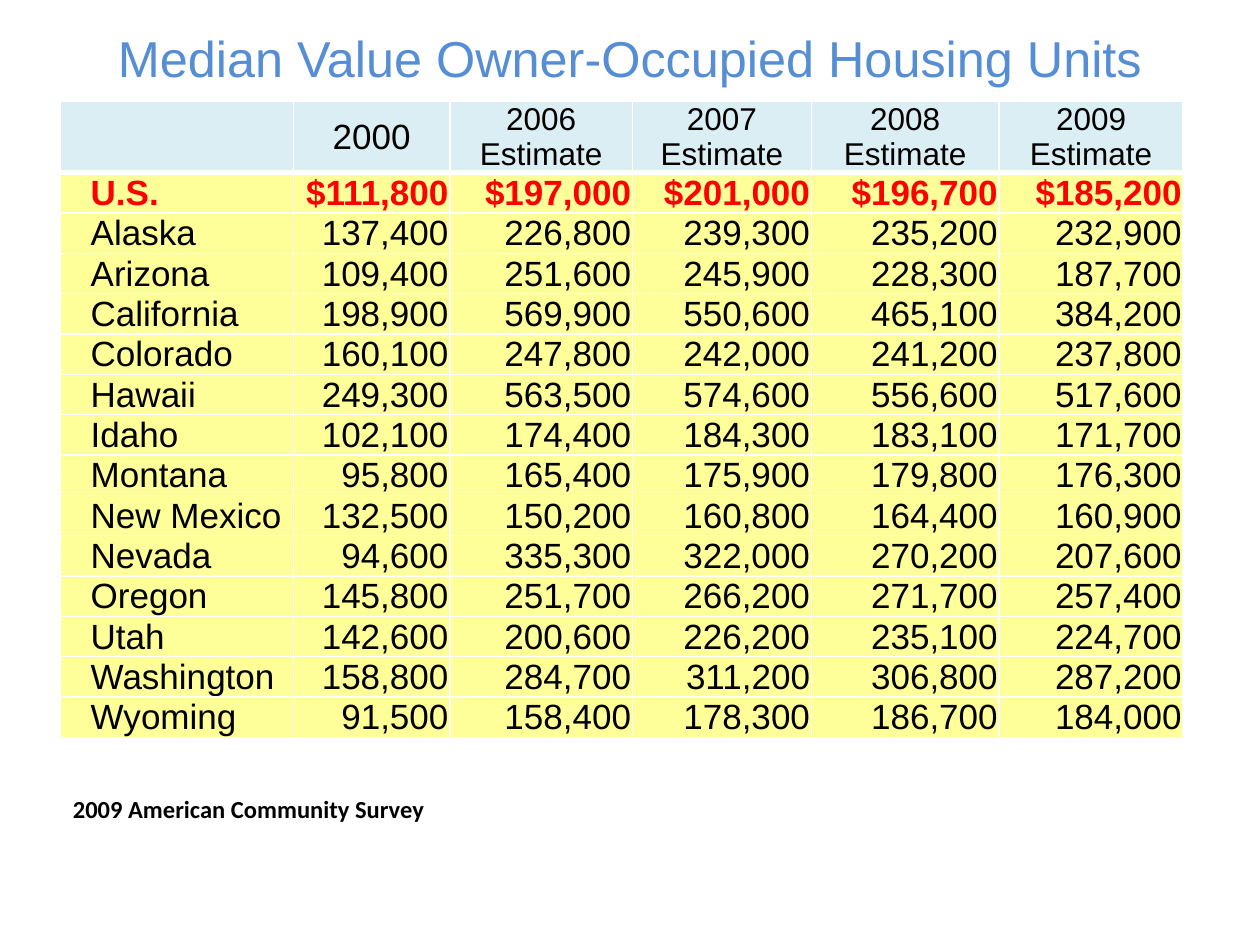
from lxml.etree import SubElement
from pptx import Presentation
from pptx.dml.color import RGBColor
from pptx.enum.text import MSO_ANCHOR as Anchor, PP_ALIGN as Align
from pptx.oxml.ns import qn
from pptx.util import Inches, Pt

COLORS = {
    "title": "558ED5",
    "header": "DBEEF4",
    "body": "FFFF99",
    "border": "FFFFFF",
    "national": "FF0000",
    "text": "000000",
}
COLUMN_WIDTHS = [1.85, 1.24, 1.45, 1.42, 1.49, 1.46]
HEADER_HEIGHT, STATE_HEIGHT = 0.56, 0.29
HEADINGS = ["", "2000", "2006 Estimate", "2007 Estimate", "2008 Estimate", "2009 Estimate"]
MEDIAN_VALUES = [
    ("U.S.", 111800, 197000, 201000, 196700, 185200),
    ("Alaska", 137400, 226800, 239300, 235200, 232900),
    ("Arizona", 109400, 251600, 245900, 228300, 187700),
    ("California", 198900, 569900, 550600, 465100, 384200),
    ("Colorado", 160100, 247800, 242000, 241200, 237800),
    ("Hawaii", 249300, 563500, 574600, 556600, 517600),
    ("Idaho", 102100, 174400, 184300, 183100, 171700),
    ("Montana", 95800, 165400, 175900, 179800, 176300),
    ("New Mexico", 132500, 150200, 160800, 164400, 160900),
    ("Nevada", 94600, 335300, 322000, 270200, 207600),
    ("Oregon", 145800, 251700, 266200, 271700, 257400),
    ("Utah", 142600, 200600, 226200, 235100, 224700),
    ("Washington", 158800, 284700, 311200, 306800, 287200),
    ("Wyoming", 91500, 158400, 178300, 186700, 184000),
]


class SlideBuilder:
    def __init__(self, slide, font="Arial"):
        self.slide = slide
        self.font = font

    def add_text(self, frame, text, size, color="text", align=Align.LEFT, bold=False, font=None):
        paragraph = frame.paragraphs[0]
        paragraph.alignment = align
        run = paragraph.add_run()
        run.text = text
        run.font.name = font or self.font
        run.font.size = Pt(size)
        run.font.bold = bold
        run.font.color.rgb = RGBColor.from_string(COLORS[color])

    def title(self, text, left, top, width, height):
        heading = self.slide.shapes.title
        heading.left, heading.top = Inches(left), Inches(top)
        heading.width, heading.height = Inches(width), Inches(height)
        heading.text_frame.vertical_anchor = Anchor.MIDDLE
        self.add_text(heading.text_frame, text, 28.8, "title", Align.CENTER)

    def borders(self, cell, top=1, bottom=1):
        """Draw the cell's four borders; must come before its fill."""
        properties = cell._tc.get_or_add_tcPr()
        for side, points in (("L", 1), ("R", 1), ("T", top), ("B", bottom)):
            line = SubElement(properties, qn(f"a:ln{side}"), w=str(Pt(points)))
            fill = SubElement(line, qn("a:solidFill"))
            SubElement(fill, qn("a:srgbClr"), val=COLORS["border"])

    def cell(self, cell, text, fill, anchor, indent=0.01, top=1, bottom=1, **style):
        self.borders(cell, top, bottom)
        cell.fill.solid()
        cell.fill.fore_color.rgb = RGBColor.from_string(COLORS[fill])
        cell.vertical_anchor = anchor
        cell.margin_left = Inches(indent)
        cell.margin_top = cell.margin_right = Inches(0.01)
        cell.margin_bottom = 0
        if text:
            self.add_text(cell.text_frame, text, **style)

    def value_table(self, left, top):
        heights = [HEADER_HEIGHT] + [STATE_HEIGHT] * len(MEDIAN_VALUES)
        table = self.slide.shapes.add_table(
            len(heights), len(COLUMN_WIDTHS), Inches(left), Inches(top),
            Inches(sum(COLUMN_WIDTHS)), Inches(sum(heights))).table
        table.horz_banding = False
        for column, width in zip(table.columns, COLUMN_WIDTHS):
            column.width = Inches(width)
        for row, height in zip(table.rows, heights):
            row.height = Inches(height)

        for column, heading in enumerate(HEADINGS):
            self.cell(table.cell(0, column), heading, "header", Anchor.MIDDLE, bottom=3,
                      size=20 if heading == "2000" else 18, align=Align.CENTER)
        for row, (place, *values) in enumerate(MEDIAN_VALUES, 1):
            national = place == "U.S."
            style = dict(size=20, bold=national, color="national" if national else "text",
                         top=3 if national else 1)
            anchor = Anchor.BOTTOM if national else Anchor.MIDDLE
            self.cell(table.cell(row, 0), place, "body", anchor, indent=0.24, **style)
            for column, value in enumerate(values, 1):
                amount = f"${value:,}" if national else f"{value:,}"
                self.cell(table.cell(row, column), amount, "body",
                          Anchor.BOTTOM if column == 1 else anchor,
                          align=Align.RIGHT, **style)

    def source_note(self, text, left, top, width, height):
        note = self.slide.shapes.add_textbox(
            Inches(left), Inches(top), Inches(width), Inches(height))
        self.add_text(note.text_frame, text, 14, bold=True, font="Calibri")


def main():
    deck = Presentation()
    deck.slide_width, deck.slide_height = Inches(10), Inches(7.5)
    builder = SlideBuilder(deck.slides.add_slide(deck.slide_layouts[5]))
    builder.title("Median Value Owner-Occupied Housing Units", 0, 0.3, 10, 0.31)
    builder.value_table(0.48, 0.8)
    builder.source_note("2009 American Community Survey", 0.48, 6.25, 3.42, 0.34)
    deck.save("out.pptx")


if __name__ == "__main__":
    main()
